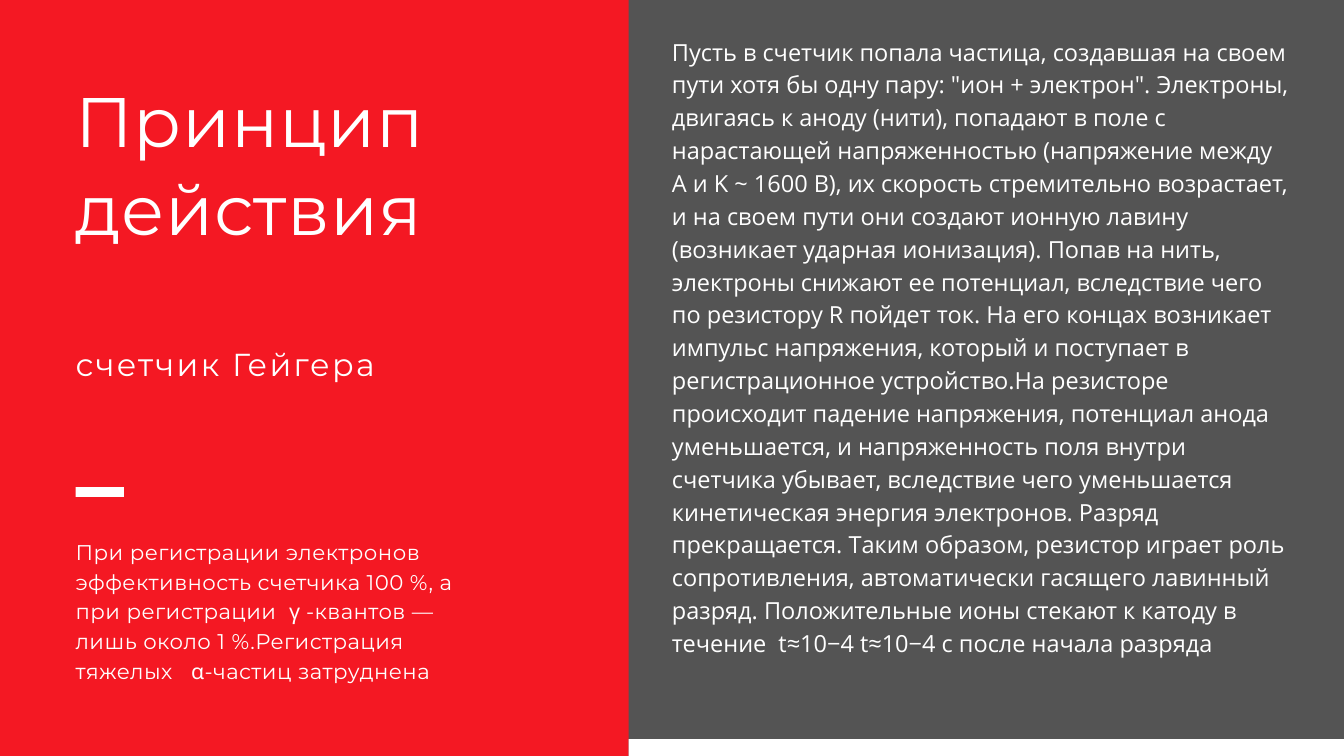
from pptx import Presentation
from pptx.dml.color import RGBColor
from pptx.enum.shapes import MSO_SHAPE
from pptx.util import Pt

RECTANGLE = MSO_SHAPE.RECTANGLE
PX = 9525  # EMU per px, 96 px to the inch
COLORS = {"background": "545454", "panel": "F41823", "white": "FFFFFF"}

deck = Presentation()
deck.slide_width, deck.slide_height = 1920 * PX, 1080 * PX
page = deck.slides.add_slide(deck.slide_layouts[6])
page.background.fill.solid()
page.background.fill.fore_color.rgb = RGBColor.from_string(COLORS["background"])

# Red panel, short accent bar, white strip at the bottom edge
blocks = [
    ("panel", -198, 0, 1096, 1152),
    ("white", 108, 696, 69, 14),
    ("white", 898, 1056, 1028, 24),
]
for color, left, top, width, height in blocks:
    block = page.shapes.add_shape(
        RECTANGLE, left * PX, top * PX, width * PX, height * PX)
    block.shadow.inherit = False
    block.fill.solid()
    block.fill.fore_color.rgb = RGBColor.from_string(COLORS[color])
    block.line.fill.background()

# Wording
title = "Принцип действия"
subtitle = "счетчик Гейгера"
efficiency = (
    "При регистрации электронов эффективность счетчика 100 %, а "
    "при регистрации  γ -квантов — лишь около 1 %.Регистрация "
    "тяжелых   α-частиц затруднена"
)
explanation = " ".join([
    "Пусть в счетчик попала частица, создавшая на своем пути хотя бы одну",
    "пару: \"ион + электрон\". Электроны, двигаясь к аноду (нити), попадают",
    "в поле с нарастающей напряженностью (напряжение между А и K ~ 1600 В),",
    "их скорость стремительно возрастает, и на своем пути они создают ионную",
    "лавину (возникает ударная ионизация). Попав на нить, электроны снижают",
    "ее потенциал, вследствие чего по резистору R пойдет ток. На его концах",
    "возникает импульс напряжения, который и поступает в регистрационное",
    "устройство.На резисторе происходит падение напряжения, потенциал анода",
    "уменьшается, и напряженность поля внутри счетчика убывает, вследствие",
    "чего уменьшается кинетическая энергия электронов. Разряд прекращается.",
    "Таким образом, резистор играет роль сопротивления, автоматически",
    "гасящего лавинный разряд. Положительные ионы стекают к катоду в",
    "течение  t≈10−4 t≈10−4 с после начала разряда",
])

# Text boxes: wording, place in px, font, size, line height and tracking in points
texts = [
    (title, (108, 105, 641, 250), "Montserrat", 75, 94.5, 0.7),
    (subtitle, (108, 493, 588, 54), "Montserrat", 34, 40.8, 2.5),
    (efficiency, (108, 764, 588, 208), "Montserrat", 22.8, 31.9, 0.5),
    (explanation, (960, 47, 885, 891), "Open Sans", 25.2, 35.2, 0),
]
for wording, place, font_name, size, line_height, tracking in texts:
    box = page.shapes.add_textbox(*(length * PX for length in place))
    frame = box.text_frame
    frame.word_wrap = True
    frame.margin_left = frame.margin_right = 0
    frame.margin_top = frame.margin_bottom = 0
    para = frame.paragraphs[0]
    para.line_spacing = Pt(line_height)
    para.font.name = font_name
    para.font.size = Pt(size)
    para.font.color.rgb = RGBColor.from_string(COLORS["white"])
    span = para.add_run()
    span.text = wording
    if tracking:
        span._r.get_or_add_rPr().set("spc", str(round(tracking * 100)))

deck.save("out.pptx")
